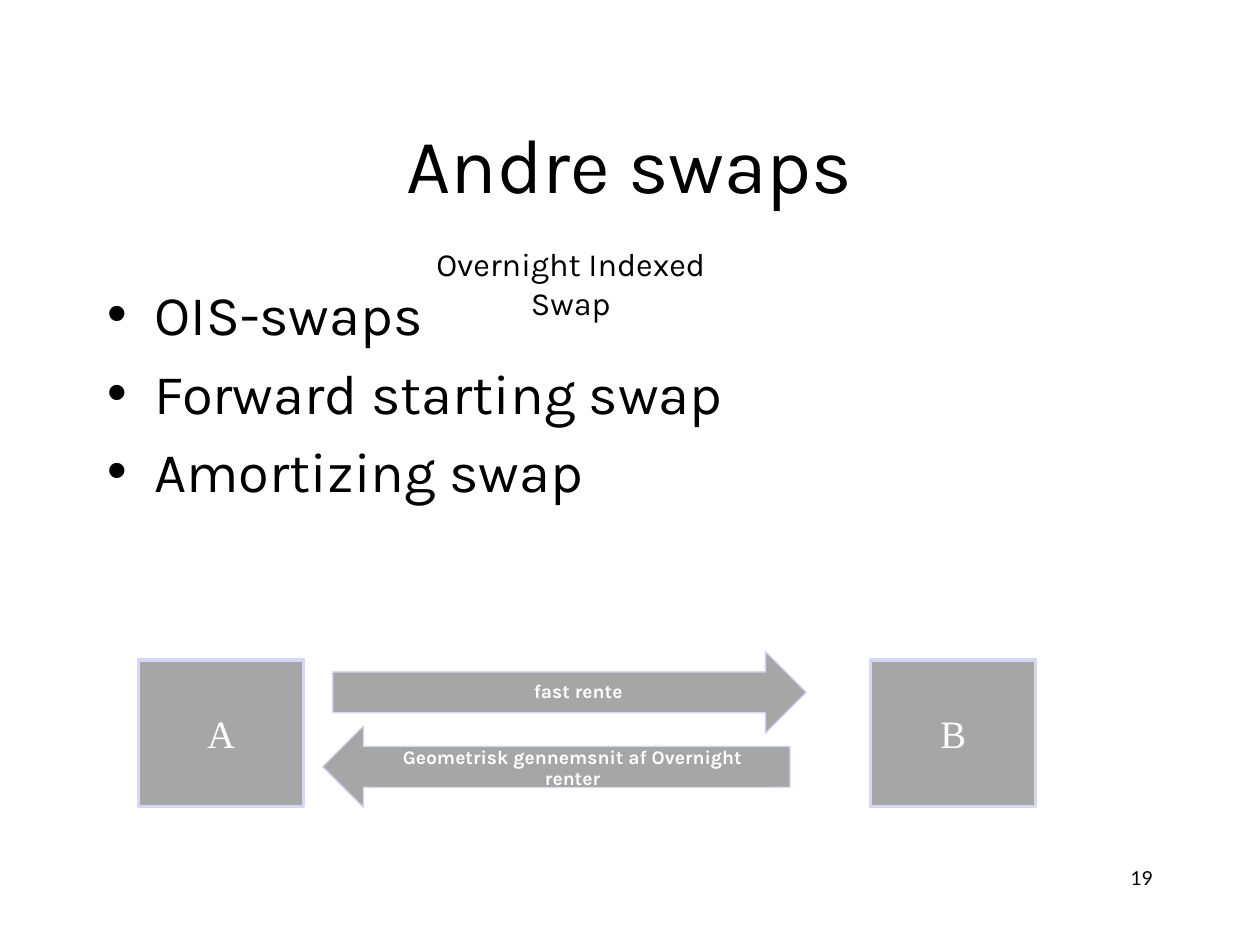
from pptx import Presentation
from pptx.dml.color import RGBColor
from pptx.enum.shapes import MSO_SHAPE as Shape
from pptx.enum.text import MSO_ANCHOR as Anchor, PP_ALIGN as Align
from pptx.util import Inches, Pt

BLACK = RGBColor(0, 0, 0)
WHITE = RGBColor(255, 255, 255)
GRAY = RGBColor(0xA6, 0xA6, 0xA6)
LAVENDER = RGBColor(0xD6, 0xD6, 0xF5)


def place(item, area):
    """Move and size an element to an area given in inches."""
    item.left, item.top, item.width, item.height = map(Inches, area)


def format_text(frame, size, font="Karla", color=BLACK, align=None, bold=False):
    """Format every run of a text frame."""
    for para in frame.paragraphs:
        if align is not None:
            para.alignment = align
        for span in para.runs:
            span.font.name = font
            span.font.size = Pt(size)
            span.font.color.rgb = color
            span.font.bold = bold


def fill_placeholder(holder, text, area, size, align=None):
    """Put formatted text into a moved placeholder."""
    place(holder, area)
    holder.text_frame.text = text
    format_text(holder.text_frame, size, align=align)


def add_text(page, text, area, size, align=Align.CENTER, **style):
    """Add a wrapping text box and return its frame."""
    frame = page.shapes.add_textbox(*map(Inches, area)).text_frame
    frame.word_wrap = True
    frame.text = text
    format_text(frame, size, align=align, **style)
    return frame


def add_block(page, kind, area, line_color, line_width):
    """Add a gray preset shape."""
    block = page.shapes.add_shape(kind, *map(Inches, area))
    block.shadow.inherit = False
    block.fill.solid()
    block.fill.fore_color.rgb = GRAY
    block.line.color.rgb = line_color
    block.line.width = Pt(line_width)
    return block


def add_party(page, name, left):
    """Add the box of one swap party."""
    box = add_block(page, Shape.RECTANGLE, (left, 5.24, 1.31, 1.16), LAVENDER, 2)
    box.text_frame.text = name
    box.text_frame.vertical_anchor = Anchor.MIDDLE
    format_text(box.text_frame, 22.1, "Times New Roman", WHITE, Align.CENTER)


def add_payment(page, text, arrow_area, plate_area, label_area, rotation=0):
    """Add a payment arrow with its plate and label."""
    arrow = add_block(page, Shape.RIGHT_ARROW, arrow_area, LAVENDER, 0.75)
    arrow.rotation = rotation
    add_block(page, Shape.ROUNDED_RECTANGLE, plate_area, GRAY, 2)
    frame = add_text(page, text, label_area, 11, color=WHITE, bold=True)
    frame.vertical_anchor = Anchor.MIDDLE
    frame.margin_left = frame.margin_right = Inches(0.05)
    frame.margin_top = frame.margin_bottom = Inches(0.05)
    frame.paragraphs[0].line_spacing = 0.9


def main():
    """Build the slide about other swaps."""
    deck = Presentation()
    deck.slide_width, deck.slide_height = Inches(10), Inches(7.5)
    page = deck.slides.add_slide(deck.slide_layouts[1])
    title, body = page.placeholders
    fill_placeholder(title, "Andre swaps", (0.75, 0.67, 8.5, 1.25), 44, Align.CENTER)
    swaps = ["OIS-swaps", "Forward starting swap", "Amortizing swap"]
    fill_placeholder(body, "\n".join(swaps), (0.75, 2.17, 8.5, 4.5), 32)
    add_text(page, "19", (7.17, 6.83, 2.08, 0.5), 11, Align.RIGHT, font="Lato")
    add_party(page, "A", 1.1)
    add_payment(page, "fast rente", (2.64, 5.17, 3.76, 0.65),
                (3.79, 5.36, 1.28, 0.26), (3.96, 5.37, 1.26, 0.24))
    add_payment(page, "Geometrisk gennemsnit af Overnight renter",
                (2.56, 5.76, 3.71, 0.65), (2.92, 5.97, 3.26, 0.26),
                (2.93, 5.98, 3.23, 0.24), rotation=180)
    add_party(page, "B", 6.91)
    add_text(page, "Overnight Indexed Swap", (3.03, 1.89, 3, 0.41), 18.5)
    deck.save("out.pptx")


if __name__ == "__main__":
    main()
